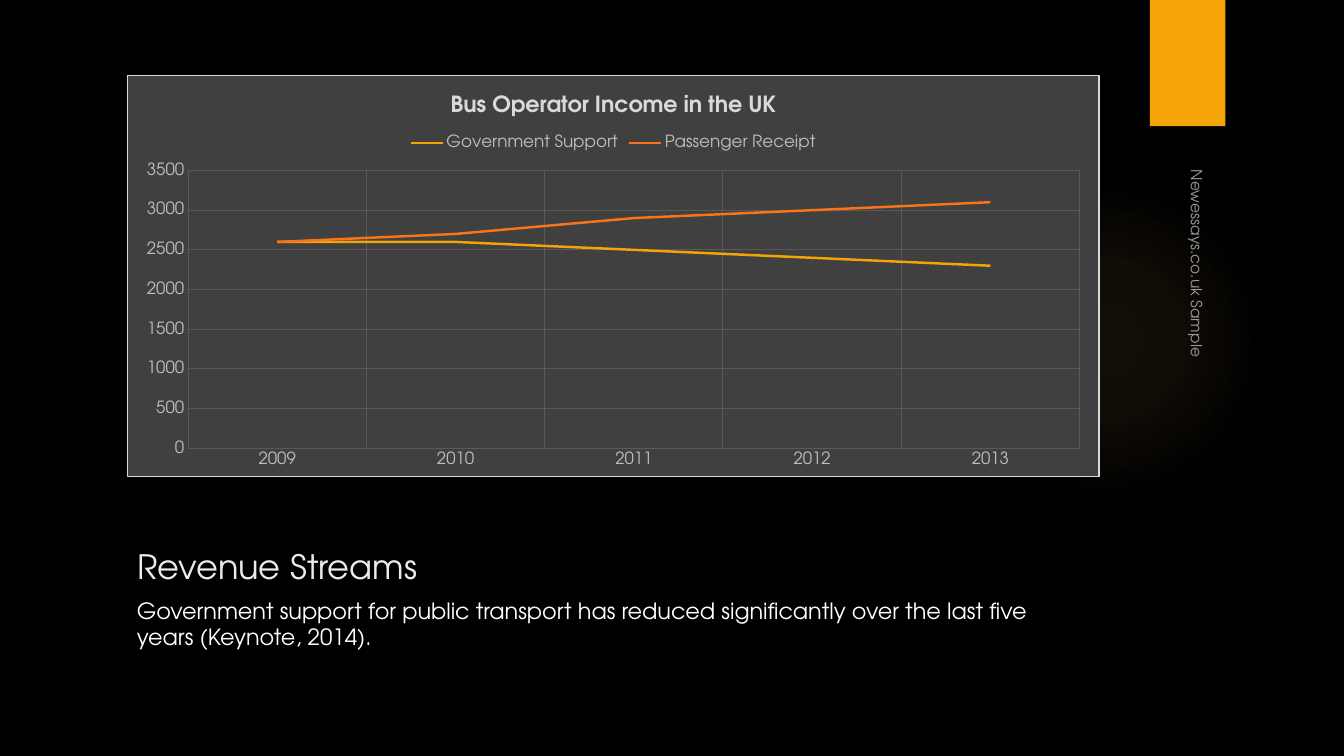
from lxml import etree
from pptx import Presentation
from pptx import util as u
from pptx.chart.data import CategoryChartData
from pptx.dml.color import RGBColor
from pptx.enum import chart as charts
from pptx.enum import shapes, text
from pptx.oxml.ns import qn

COLOURS = {
    "background": "000000",
    "glow": "FAC96A",
    "amber": "F5A408",
    "orange": "FA731A",
    "heading": "EBEBEB",
    "body": "FFFFFF",
    "sample": "999999",
    "panel": "404040",
    "border": "D9D9D9",
    "labels": "BFBFBF",
    "grid": "595959",
}
LEFT, WIDTH = 3.2, 24.51
YEARS = ["2009", "2010", "2011", "2012", "2013"]
INCOME = {
    "Government Support": ("amber", [2600, 2600, 2500, 2400, 2300]),
    "Passenger Receipt": ("orange", [2600, 2700, 2900, 3000, 3100]),
}


def colour(name):
    return RGBColor.from_string(COLOURS[name])


class IncomeSlide:
    font_name = "TeX Gyre Adventor"

    def __init__(self, presentation):
        self.slide = presentation.slides.add_slide(presentation.slide_layouts[5])
        fill = self.slide.background.fill
        fill.solid()
        fill.fore_color.rgb = colour("background")

    def style_font(self, font, size, name, bold=False):
        font.name = self.font_name
        font.size = u.Pt(size)
        font.bold = bold
        font.color.rgb = colour(name)

    def style_line(self, line, name, width):
        line.color.rgb = colour(name)
        line.width = u.Pt(width)

    def preset(self, kind, box, name):
        shape = self.slide.shapes.add_shape(kind, *map(u.Cm, box))
        shape.shadow.inherit = False
        shape.fill.solid()
        shape.fill.fore_color.rgb = colour(name)
        shape.line.fill.background()
        return shape

    def glow(self, box, stops):
        shape = self.preset(shapes.MSO_SHAPE.OVAL, box, "glow")
        gradient = etree.Element(qn("a:gradFill"), rotWithShape="1")
        stop_list = etree.SubElement(gradient, qn("a:gsLst"))
        for position, alpha in stops:
            stop = etree.SubElement(stop_list, qn("a:gs"), pos=str(position * 1000))
            tint = etree.SubElement(stop, qn("a:srgbClr"), val=COLOURS["glow"])
            etree.SubElement(tint, qn("a:alpha"), val=str(alpha * 1000))
        radial = etree.SubElement(gradient, qn("a:path"), path="circle")
        centre = dict.fromkeys("ltrb", "50000")
        etree.SubElement(radial, qn("a:fillToRect"), **centre)
        properties = shape._element.spPr
        properties.replace(properties.find(qn("a:solidFill")), gradient)

    def set_text(self, shape, words, size, name, anchor):
        frame = shape.text_frame
        frame.text = words
        frame.word_wrap = True
        frame.auto_size = text.MSO_AUTO_SIZE.NONE
        frame.vertical_anchor = anchor
        paragraph = frame.paragraphs[0]
        paragraph.alignment = text.PP_ALIGN.LEFT
        self.style_font(paragraph.font, size, name)

    def title(self, words, box):
        shape = self.slide.shapes.title
        shape.left, shape.top, shape.width, shape.height = map(u.Cm, box)
        self.set_text(shape, words, 24, "heading", text.MSO_ANCHOR.BOTTOM)

    def text_box(self, words, box, size, name, anchor=text.MSO_ANCHOR.TOP, rotation=0):
        shape = self.slide.shapes.add_textbox(*map(u.Cm, box))
        shape.rotation = rotation
        self.set_text(shape, words, size, name, anchor)

    def axis(self, axis):
        axis.has_major_gridlines = True
        self.style_line(axis.major_gridlines.format.line, "grid", 0.75)
        axis.major_tick_mark = charts.XL_TICK_MARK.NONE
        axis.minor_tick_mark = charts.XL_TICK_MARK.NONE
        axis.format.line.fill.background()
        self.style_font(axis.tick_labels.font, 12, "labels")

    def panel(self, chart):
        space = chart._chartSpace
        properties = etree.Element(qn("c:spPr"))
        fill = etree.SubElement(properties, qn("a:solidFill"))
        etree.SubElement(fill, qn("a:srgbClr"), val=COLOURS["panel"])
        line = etree.SubElement(properties, qn("a:ln"), w=str(u.Pt(0.75)))
        line_fill = etree.SubElement(line, qn("a:solidFill"))
        etree.SubElement(line_fill, qn("a:srgbClr"), val=COLOURS["border"])
        space.find(qn("c:chart")).addnext(properties)

    def line_chart(self, heading, box):
        data = CategoryChartData()
        data.categories = YEARS
        for name, (_, values) in INCOME.items():
            data.add_series(name, values)
        chart = self.slide.shapes.add_chart(
            charts.XL_CHART_TYPE.LINE, *map(u.Cm, box), data
        ).chart
        self.style_font(chart.font, 10, "body")
        chart.has_title = True
        chart.chart_title.include_in_layout = False
        chart.chart_title.text_frame.text = heading
        paragraph = chart.chart_title.text_frame.paragraphs[0]
        self.style_font(paragraph.font, 16, "border", True)
        chart.has_legend = True
        chart.legend.position = charts.XL_LEGEND_POSITION.TOP
        chart.legend.include_in_layout = False
        self.style_font(chart.legend.font, 12, "labels")
        self.axis(chart.category_axis)
        self.axis(chart.value_axis)
        chart.value_axis.minimum_scale = 0
        chart.value_axis.maximum_scale = 3500
        chart.value_axis.major_unit = 500
        plot = chart.plots[0]
        plot.vary_by_categories = False
        for series in plot.series:
            self.style_line(series.format.line, INCOME[series.name][0], 1.75)
            series.marker.style = charts.XL_MARKER_STYLE.NONE
            series.smooth = False
        self.panel(chart)


def main():
    presentation = Presentation()
    presentation.slide_width = u.Cm(33.87)
    presentation.slide_height = u.Cm(19.05)
    slide = IncomeSlide(presentation)
    slide.glow((23.9, 4.65, 7.82, 7.82), [(0, 7), (36, 6), (69, 0)])
    slide.preset(shapes.MSO_SHAPE.RECTANGLE, (28.98, 0, 1.9, 3.18), "amber")
    slide.title("Revenue Streams", (LEFT, 13.34, WIDTH, 1.57))
    slide.line_chart("Bus Operator Income in the UK", (LEFT, 1.9, WIDTH, 10.11))
    slide.text_box(
        "Government support for public transport has reduced significantly "
        "over the last five years (Keynote, 2014).",
        (LEFT, 14.91, WIDTH, 1.37), 16, "body",
    )
    slide.text_box(
        "Newessays.co.uk Sample", (24.87, 8.97, 10.72, 0.84), 11, "sample",
        text.MSO_ANCHOR.BOTTOM, 90,
    )
    presentation.save("out.pptx")


if __name__ == "__main__":
    main()
